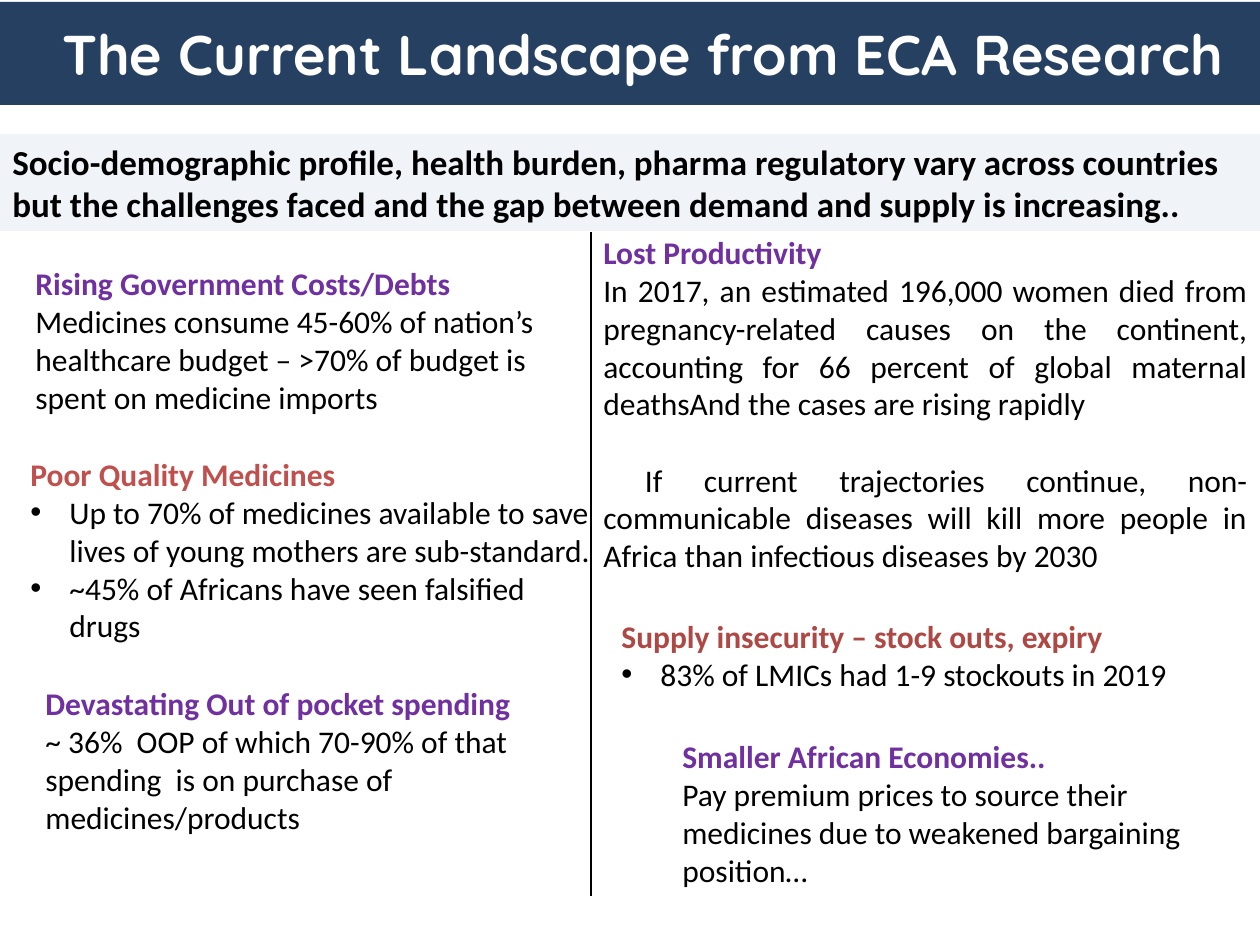
from dataclasses import dataclass

from lxml import etree
from pptx import Presentation
from pptx.dml.color import RGBColor
from pptx.enum.shapes import MSO_CONNECTOR, MSO_SHAPE
from pptx.enum.text import MSO_ANCHOR, MSO_AUTO_SIZE, PP_ALIGN
from pptx.oxml.ns import qn
from pptx.util import Emu, Pt

NAVY = RGBColor(0x25, 0x40, 0x61)
PALE = RGBColor(0xF0, 0xF3, 0xF8)
PURPLE = RGBColor(0x70, 0x30, 0xA0)
RED = RGBColor(0xC0, 0x50, 0x4D)
DARK_RED = RGBColor(0xAE, 0x48, 0x45)
BLACK = RGBColor(0, 0, 0)
WHITE = RGBColor(0xFF, 0xFF, 0xFF)

RECTANGLE = MSO_SHAPE.RECTANGLE
STRAIGHT = MSO_CONNECTOR.STRAIGHT
TOP, MIDDLE = MSO_ANCHOR.TOP, MSO_ANCHOR.MIDDLE
LEFT, JUSTIFY = PP_ALIGN.LEFT, PP_ALIGN.JUSTIFY
NO_AUTOFIT = MSO_AUTO_SIZE.NONE

PX_PER_INCH = 126
SLIDE_WIDTH, SLIDE_HEIGHT = 1260, 945
DIVIDER_X = 591
INSET = 13
HANGING = 39


@dataclass(frozen=True)
class Point:
    text: str
    bullet: bool = False
    align: PP_ALIGN = LEFT
    space_before: int = 0


@dataclass(frozen=True)
class Topic:
    box: tuple[int, int, int, int]
    heading: str
    color: RGBColor
    points: tuple[Point, ...]


TOPICS = (
    Topic((23, 258, 551, 165), "Rising Government Costs/Debts", PURPLE, (
        Point("Medicines consume 45-60% of nation’s healthcare budget – "
              ">70% of budget is spent on medicine imports"),)),
    Topic((18, 449, 596, 204), "Poor Quality Medicines", RED, (
        Point("Up to 70% of medicines available to save lives of young "
              "mothers are sub-standard.", bullet=True),
        Point("~45% of Africans have seen falsified drugs", bullet=True))),
    Topic((609, 611, 651, 127), "Supply insecurity – stock outs, expiry", DARK_RED, (
        Point("83% of LMICs had 1-9 stockouts in 2019", bullet=True),)),
    Topic((33, 678, 596, 165), "Devastating Out of pocket spending", PURPLE, (
        Point("~ 36%  OOP of which 70-90% of that spending  is on purchase of "
              "medicines/products"),)),
    Topic((670, 731, 557, 165), "Smaller African Economies..", PURPLE, (
        Point("Pay premium prices to source their medicines due to weakened "
              "bargaining position…"),)),
    Topic((DIVIDER_X, 227, 669, 411), "Lost Productivity", PURPLE, (
        Point("In 2017, an estimated 196,000 women died from pregnancy-related "
              "causes on the continent, accounting for 66 percent of global "
              "maternal deathsAnd the cases are rising rapidly", align=JUSTIFY),
        Point(" If current trajectories continue, non-communicable diseases will "
              "kill more people in Africa than infectious diseases by 2030",
              align=JUSTIFY, space_before=22))),
)


def px(length: int) -> Emu:
    return Emu(round(length * 914400 / PX_PER_INCH))


def set_font(paragraph, size: int, color: RGBColor, bold: bool = False,
             name: str = "Calibri") -> None:
    font = paragraph.font
    font.name, font.size, font.bold = name, Pt(size), bold
    font.color.rgb = color


def set_indent(paragraph, left: int, first_line: int) -> None:
    properties = paragraph._p.get_or_add_pPr()
    properties.set("marL", str(px(left)))
    properties.set("indent", str(px(first_line)))


def add_bullet(paragraph) -> None:
    set_indent(paragraph, HANGING, -HANGING)
    properties = paragraph._p.get_or_add_pPr()
    etree.SubElement(properties, qn("a:buFont"), typeface="Arial")
    etree.SubElement(properties, qn("a:buChar"), char="•")


def format_title(title) -> None:
    """Turn the title placeholder into a rounded banner."""
    title.left, title.top, title.width, title.height = map(
        px, (0, 2, SLIDE_WIDTH, 103))
    outline = etree.SubElement(title.element.spPr, qn("a:prstGeom"), prst="roundRect")
    etree.SubElement(outline, qn("a:avLst"))
    title.fill.solid()
    title.fill.fore_color.rgb = NAVY
    frame = title.text_frame
    frame.text = "The Current Landscape from ECA Research"
    frame.auto_size = NO_AUTOFIT
    frame.vertical_anchor = MIDDLE
    frame.margin_left = frame.margin_right = px(INSET)
    frame.margin_top = frame.margin_bottom = px(INSET)
    paragraph = frame.paragraphs[0]
    paragraph.alignment = LEFT
    set_indent(paragraph, 49, 0)
    set_font(paragraph, 32, WHITE, bold=True, name="Quicksand")


def add_topic(slide, topic: Topic) -> None:
    frame = slide.shapes.add_textbox(*map(px, topic.box)).text_frame
    frame.word_wrap = True
    heading = frame.paragraphs[0]
    heading.text = topic.heading
    set_font(heading, 18, topic.color, bold=True)
    for point in topic.points:
        paragraph = frame.add_paragraph()
        paragraph.text = point.text
        paragraph.alignment = point.align
        if point.space_before:
            paragraph.space_before = Pt(point.space_before)
        if point.bullet:
            add_bullet(paragraph)
        set_font(paragraph, 18, BLACK)


def add_summary(slide) -> None:
    summary = slide.shapes.add_shape(RECTANGLE, *map(px, (0, 134, SLIDE_WIDTH, 97)))
    summary.shadow.inherit = False
    summary.fill.solid()
    summary.fill.fore_color.rgb = PALE
    summary.line.fill.background()
    frame = summary.text_frame
    frame.word_wrap = True
    frame.vertical_anchor = TOP
    paragraph = frame.paragraphs[0]
    paragraph.text = (
        "Socio-demographic profile, health burden, pharma regulatory vary across "
        "countries but the challenges faced and the gap between demand and supply "
        "is increasing..")
    paragraph.alignment = LEFT
    set_font(paragraph, 20, BLACK, bold=True)


def add_divider(slide) -> None:
    divider = slide.shapes.add_connector(
        STRAIGHT, px(DIVIDER_X), px(232), px(DIVIDER_X), px(896))
    divider.line.color.rgb = BLACK
    divider.line.width = Pt(0.75)
    etree.SubElement(divider.element.spPr, qn("a:effectLst"))


def main() -> None:
    presentation = Presentation()
    presentation.slide_width = px(SLIDE_WIDTH)
    presentation.slide_height = px(SLIDE_HEIGHT)
    slide = presentation.slides.add_slide(presentation.slide_layouts[5])
    format_title(slide.shapes.title)
    for topic in TOPICS:
        add_topic(slide, topic)
    add_summary(slide)
    add_divider(slide)
    presentation.save("out.pptx")


if __name__ == "__main__":
    main()
